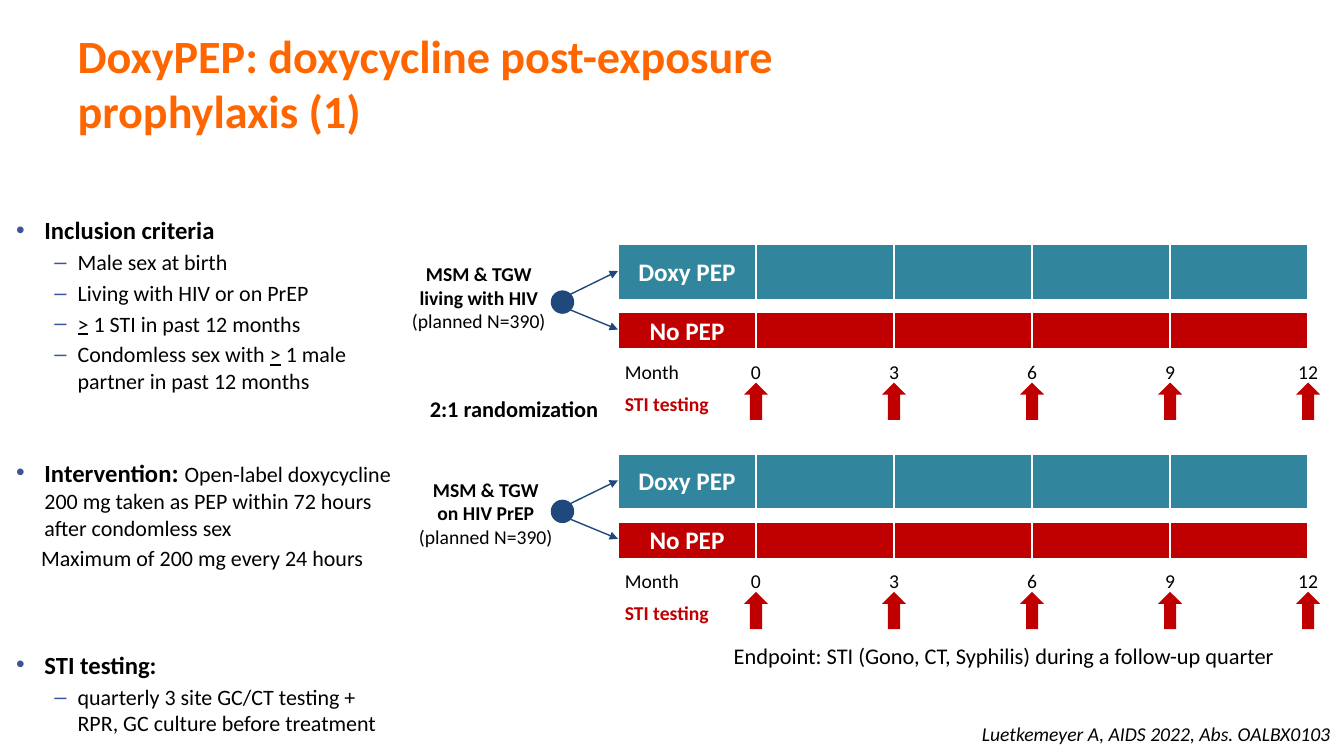
from lxml.etree import SubElement
from pptx import Presentation
from pptx.dml.color import RGBColor
from pptx.enum.shapes import MSO_CONNECTOR, MSO_SHAPE
from pptx.enum.text import MSO_ANCHOR, MSO_AUTO_SIZE, PP_ALIGN
from pptx.oxml.ns import qn
from pptx.util import Pt

ORANGE = RGBColor(0xFF, 0x66, 0x00)
TEAL = RGBColor(0x31, 0x85, 0x9C)
RED = RGBColor(0xC0, 0x00, 0x00)
NAVY = RGBColor(0x1F, 0x49, 0x7D)
BULLET_BLUE = RGBColor(0x3C, 0x54, 0x9F)
BLACK = RGBColor(0x00, 0x00, 0x00)
WHITE = RGBColor(0xFF, 0xFF, 0xFF)

BAR_LEFT = 441.4
QUARTER = 98.6
MONTHS = ("0", "3", "6", "9", "12")
ARM_STEP = 149.5

HEAD, ITEM = 17.6, 15.7
# Each entry: left margin, first-line indent, bullet, space before, runs (text, size, bold, underline)
TOP, SUB, PLAIN = (20.2, -20.2, "•"), (43.9, -16.6, "–"), (17.8, 0, None)
CRITERIA = [
    (TOP, 0, [("Inclusion criteria", HEAD, True, False)]),
    (SUB, 3.1, [("Male sex at birth", ITEM, False, False)]),
    (SUB, 3.1, [("Living with HIV or on PrEP", ITEM, False, False)]),
    (SUB, 3.1, [(">", ITEM, False, True), (" 1 STI in past 12 months", ITEM, False, False)]),
    (SUB, 3.1, [("Condomless sex with ", ITEM, False, False), (">", ITEM, False, True),
                (" 1 male partner in past 12 months", ITEM, False, False)]),
    (TOP, 45, [("Intervention", HEAD, True, False), (": ", 18.5, True, False),
               ("Open-label doxycycline 200 mg taken as PEP within 72 hours after condomless sex",
                ITEM, False, False)]),
    (PLAIN, 3.1, [("Maximum of 200 mg every 24 hours", ITEM, False, False)]),
    (TOP, 56, [("STI testing:", HEAD, True, False)]),
    (SUB, 3.1, [("quarterly 3 site GC/CT testing + RPR, GC culture before treatment",
                 ITEM, False, False)]),
]


class TrialSlide:
    def __init__(self, presentation, font_name):
        self.slide = presentation.slides.add_slide(presentation.slide_layouts[1])
        self.font_name = font_name

    def place(self, shape, left, top, width, height):
        shape.left, shape.top, shape.width, shape.height = Pt(left), Pt(top), Pt(width), Pt(height)

    def run(self, paragraph, text, size, color=BLACK, bold=False, italic=False, underline=False):
        run = paragraph.add_run()
        run.text = text
        font = run.font
        font.name, font.size, font.bold = self.font_name, Pt(size), bold
        font.italic, font.underline = italic, underline
        font.color.rgb = color

    def title(self, text, *box):
        shape = self.slide.shapes.title
        self.place(shape, *box)
        frame = shape.text_frame
        frame.auto_size, frame.vertical_anchor = MSO_AUTO_SIZE.NONE, MSO_ANCHOR.MIDDLE
        frame.paragraphs[0].alignment = PP_ALIGN.LEFT
        self.run(frame.paragraphs[0], text, 33, ORANGE, bold=True)

    def bullets(self, paragraph, style):
        margin, indent, character = style
        properties = paragraph._p.get_or_add_pPr()
        properties.set("marL", str(Pt(margin)))
        properties.set("indent", str(Pt(indent)))
        if character is None:
            SubElement(properties, qn("a:buNone"))
            return
        color = SubElement(properties, qn("a:buClr"))
        SubElement(color, qn("a:srgbClr"), val=str(BULLET_BLUE))
        SubElement(properties, qn("a:buFont"), typeface="Arial")
        SubElement(properties, qn("a:buChar"), char=character)

    def body(self, entries, *box):
        shape = self.slide.placeholders[1]
        self.place(shape, *box)
        frame = shape.text_frame
        frame.auto_size = MSO_AUTO_SIZE.NONE
        for index, (style, space_before, runs) in enumerate(entries):
            paragraph = frame.add_paragraph() if index else frame.paragraphs[0]
            paragraph.level = 1 if style is SUB else 0
            self.bullets(paragraph, style)
            paragraph.space_before = Pt(space_before)
            for text, size, bold, underline in runs:
                self.run(paragraph, text, size, bold=bold, underline=underline)

    def label(self, lines, left, top, width, height, size=14, color=BLACK,
              alignment=PP_ALIGN.LEFT, italic=False):
        """Adds an unwrapped text box; lines are (text, bold) pairs."""
        frame = self.slide.shapes.add_textbox(Pt(left), Pt(top), Pt(width), Pt(height)).text_frame
        frame.word_wrap = False
        for index, (text, bold) in enumerate(lines):
            paragraph = frame.add_paragraph() if index else frame.paragraphs[0]
            paragraph.alignment = alignment
            self.run(paragraph, text, size, color, bold, italic)

    def bar(self, name, top, height, color):
        """Adds a one-row table with one cell per quarter."""
        table = self.slide.shapes.add_table(
            1, 5, Pt(BAR_LEFT), Pt(top), Pt(5 * QUARTER), Pt(height)).table
        table.first_row = table.horz_banding = False
        for cell in table.iter_cells():
            properties = cell._tc.get_or_add_tcPr()
            for side, width in (("L", 1), ("R", 1), ("T", 1), ("B", 3)):
                line = SubElement(properties, qn(f"a:ln{side}"), w=str(Pt(width)))
                fill = SubElement(line, qn("a:solidFill"))
                SubElement(fill, qn("a:srgbClr"), val=str(WHITE))
            cell.fill.solid()
            cell.fill.fore_color.rgb = color
            cell.margin_top = cell.margin_bottom = Pt(2)
            cell.vertical_anchor = MSO_ANCHOR.MIDDLE
        paragraph = table.cell(0, 0).text_frame.paragraphs[0]
        paragraph.alignment = PP_ALIGN.CENTER
        self.run(paragraph, name, 18, WHITE, bold=True)

    def shape(self, kind, left, top, width, height, color, outlined=False):
        shape = self.slide.shapes.add_shape(kind, Pt(left), Pt(top), Pt(width), Pt(height))
        shape.shadow.inherit = False
        shape.fill.solid()
        shape.fill.fore_color.rgb = color
        if outlined:
            shape.line.color.rgb = color
            shape.line.width = Pt(0.75)
        else:
            shape.line.fill.background()

    def arrow(self, *ends):
        connector = self.slide.shapes.add_connector(MSO_CONNECTOR.STRAIGHT, *map(Pt, ends))
        connector.line.color.rgb = NAVY
        connector.line.width = Pt(1)
        SubElement(connector.line._get_or_add_ln(), qn("a:tailEnd"), type="triangle")
        SubElement(connector._element.spPr, qn("a:effectLst"))

    def cohort(self, top):
        """Draws both study arms, the month scale and the randomization arrows."""
        self.bar("Doxy PEP", top, 40, TEAL)
        self.bar("No PEP", top + 48.5, 26.8, RED)
        self.label([("Month", False)], 439.2, top + 78.5, 54, 24.2)
        self.label([("STI testing", True)], 439.2, top + 101.6, 75, 24.2, color=RED)
        for index, month in enumerate(MONTHS):
            center = BAR_LEFT + QUARTER * (index + 1)
            self.label([(month, False)], center - 14.4, top + 78.5, 28.8, 24.2,
                       alignment=PP_ALIGN.CENTER)
            self.shape(MSO_SHAPE.UP_ARROW, center - 8.6, top + 98.5, 17.2, 26.6, RED)
        self.shape(MSO_SHAPE.OVAL, 393.8, top + 33, 16, 16, NAVY, outlined=True)
        self.arrow(407.5, top + 35.4, BAR_LEFT, top + 18.8)
        self.arrow(407.5, top + 46.6, BAR_LEFT, top + 60.6)


def main():
    presentation = Presentation()
    presentation.slide_width, presentation.slide_height = Pt(960), Pt(540)
    slide = TrialSlide(presentation, "Calibri")
    slide.title("DoxyPEP: doxycycline post-exposure prophylaxis (1)", 48.2, 0.7, 666.7, 116.6)
    slide.body(CRITERIA, 4.3, 149.8, 285.1, 363.6)
    for index in range(2):
        slide.cohort(174.8 + ARM_STEP * index)
    for group, left, top in (("living with HIV", 286.6, 183.6), ("on HIV PrEP", 291.6, 337.7)):
        slide.label([("MSM & TGW", True), (group, True), ("(planned N=390)", False)],
                    left, top, 110.9, 58.3, alignment=PP_ALIGN.CENTER)
    slide.label([("2:1 randomization", True)], 298.8, 278.6, 136.8, 26.6, size=16,
                alignment=PP_ALIGN.CENTER)
    slide.label([("Endpoint: STI (Gono, CT, Syphilis) during a follow-up quarter", False)],
                517, 455, 409, 26.6, size=16)
    slide.label([("Luetkemeyer A, AIDS 2022, Abs. OALBX0103", False)], 691.9, 511.9, 265.7, 24.2,
                alignment=PP_ALIGN.RIGHT, italic=True)
    presentation.save("out.pptx")


if __name__ == "__main__":
    main()
